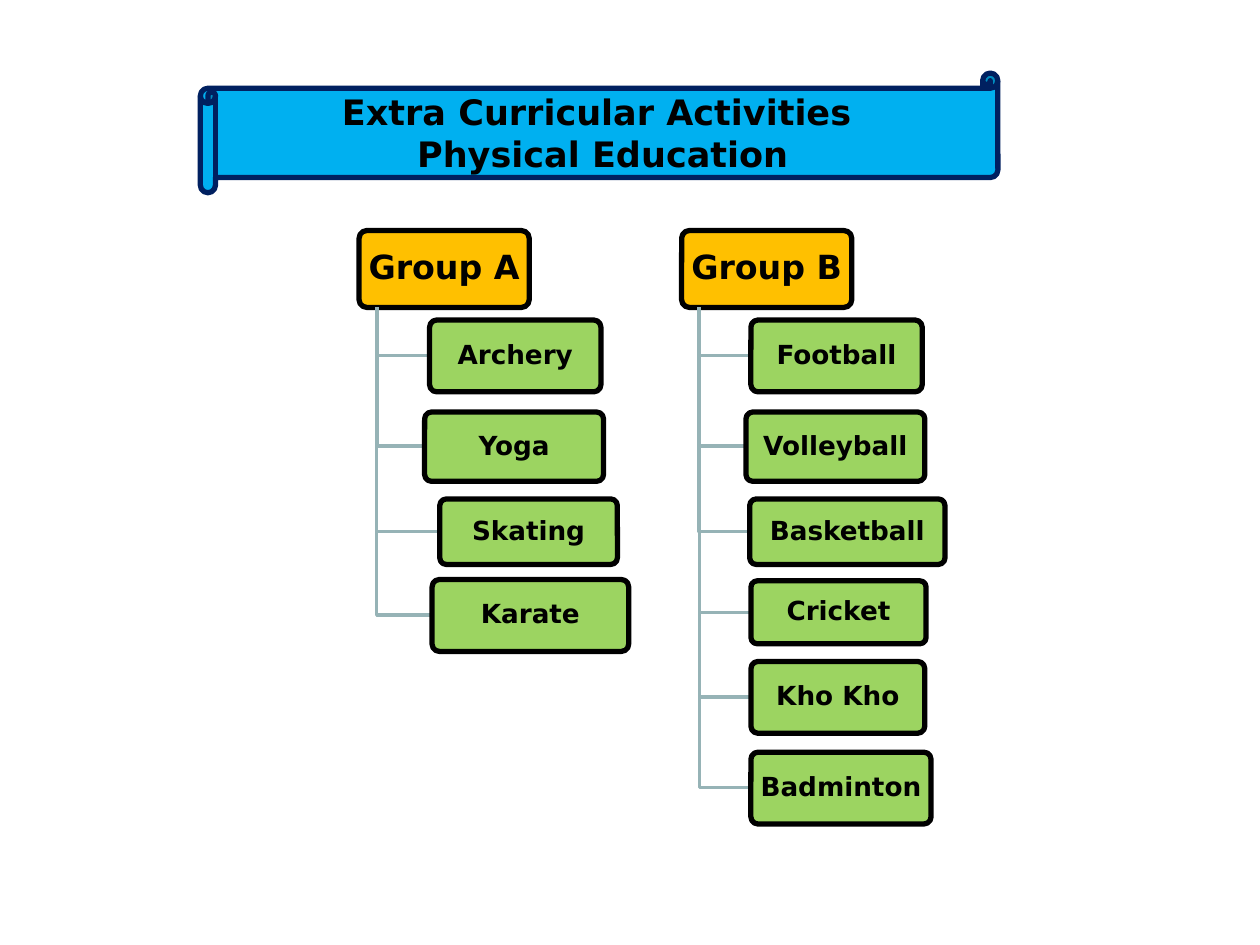
from lxml import etree
from pptx import Presentation
from pptx.dml.color import RGBColor
from pptx.enum.shapes import MSO_SHAPE
from pptx.enum.text import MSO_ANCHOR, PP_ALIGN
from pptx.oxml.ns import qn
from pptx.util import Pt

ROUND_RECT = MSO_SHAPE.ROUNDED_RECTANGLE
SCROLL = MSO_SHAPE.HORIZONTAL_SCROLL
MIDDLE = MSO_ANCHOR.MIDDLE
CENTER = PP_ALIGN.CENTER

PX = 9144  # EMU per px, 100 px to the inch
THEME = {
    "font": "DejaVu Sans", "text": "000000",
    "banner": "00B0F0", "banner_line": "002060",
    "group": "FFC000", "activity": "92D050", "box_line": "000000",
    "branch": "96B3B6", "activity_alpha": 90,
    "title_size": 20, "group_size": 19, "activity_size": 15,
    "outline": 3, "branch_width": 2,
}

prs = Presentation()
prs.slide_width, prs.slide_height = 1000 * PX, 750 * PX
s = prs.slides.add_slide(prs.slide_layouts[6])


def add_box(kind, adj, box, fill, line, lines, size, spacing=1.0):
    sp = s.shapes.add_shape(kind, *(v * PX for v in box))
    sp.adjustments[0] = adj
    sp.shadow.inherit = False
    sp.fill.solid()
    sp.fill.fore_color.rgb = RGBColor.from_string(THEME[fill])
    sp.line.color.rgb = RGBColor.from_string(THEME[line])
    sp.line.width = Pt(THEME["outline"])
    tf = sp.text_frame
    tf.word_wrap = False
    tf.vertical_anchor = MIDDLE
    tf.margin_left = tf.margin_right = 5 * PX
    tf.margin_top = tf.margin_bottom = 4 * PX
    for i, text in enumerate(lines):
        p = tf.add_paragraph() if i else tf.paragraphs[0]
        p.alignment = CENTER
        p.line_spacing = spacing
        r = p.add_run()
        r.text = text
        r.font.name = THEME["font"]
        r.font.size = Pt(THEME[size])
        r.font.bold = True
        r.font.color.rgb = RGBColor.from_string(THEME["text"])
    return sp


def add_branch(x, y, end_x, end_y):
    fb = s.shapes.build_freeform(x, y, scale=PX)
    fb.add_line_segments([(x, end_y), (end_x, end_y)], close=False)
    sp = fb.convert_to_shape()
    sp.shadow.inherit = False
    sp.fill.background()
    sp.line.color.rgb = RGBColor.from_string(THEME["branch"])
    sp.line.width = Pt(THEME["branch_width"])


# Groups: name, left, activities as (name, left, top, width, height)
GROUP_TOP, GROUP_W, GROUP_H, TRUNK_INSET = 183, 135, 61, 14
groups = [
    ("Group A", 285, [
        ("Archery", 341, 254, 136, 57),
        ("Yoga", 337, 327, 142, 55),
        ("Skating", 349, 396, 141, 52),
        ("Karate", 343, 460, 156, 57),
    ]),
    ("Group B", 541, [
        ("Football", 596, 254, 136, 57),
        ("Volleyball", 592, 327, 142, 55),
        ("Basketball", 595, 396, 155, 52),
        ("Cricket", 596, 461, 139, 50),
        ("Kho Kho", 596, 525, 138, 57),
        ("Badminton", 596, 597, 143, 57),
    ]),
]

for group, left, activities in groups:
    # Group heading
    add_box(ROUND_RECT, 0.1, (left, GROUP_TOP, GROUP_W, GROUP_H),
            "group", "box_line", [group], "group_size", 0.9)
    # Branches and activities
    for name, x, y, w, h in activities:
        add_branch(left + TRUNK_INSET, GROUP_TOP + GROUP_H, x, y + h // 2)
        sp = add_box(ROUND_RECT, 0.1, (x, y, w, h),
                     "activity", "box_line", [name], "activity_size", 0.9)
        color = sp.fill._xPr.find(qn("a:solidFill"))[0]
        alpha = etree.SubElement(color, qn("a:alpha"))
        alpha.set("val", str(THEME["activity_alpha"] * 1000))

# Title banner
add_box(SCROLL, 0.127, (159, 58, 633, 95), "banner", "banner_line",
        ["Extra Curricular Activities ", "Physical Education"], "title_size")

prs.save("out.pptx")
